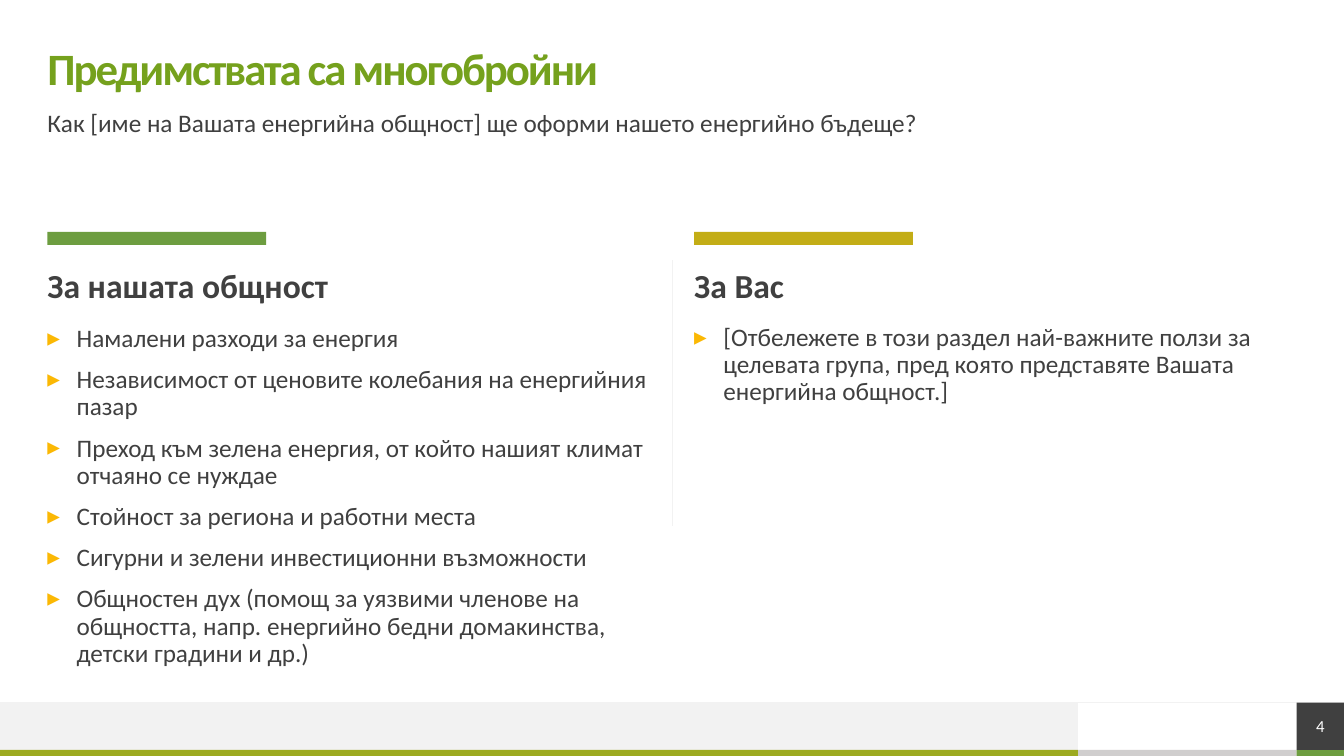
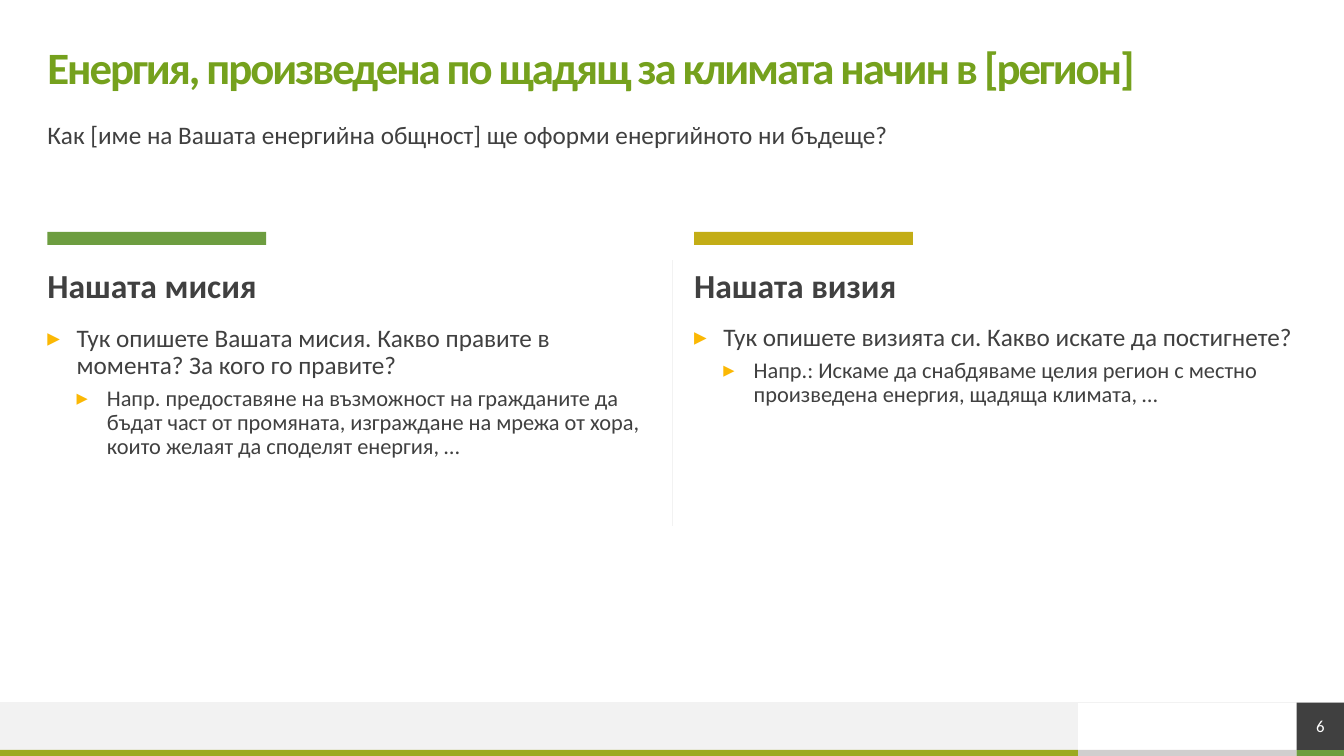
from lxml import etree
from pptx import Presentation
from pptx import util as u
from pptx.dml.color import RGBColor
from pptx.enum import shapes, text
from pptx.oxml import ns

SLIDES = [
    dict(number="4", title="Предимствата са многобройни", title_box=(0.47, 0.47),
         subtitle="Как [име на Вашата енергийна общност] ще оформи нашето енергийно бъдеще?",
         subtitle_top=1.1,
         columns=[
             ("За нашата общност", 3.49, [
                 (0, "Намалени разходи за енергия"),
                 (0, "Независимост от ценовите колебания на енергийния пазар"),
                 (0, "Преход към зелена енергия, от който нашият климат отчаяно се нуждае"),
                 (0, "Стойност за региона и работни места"),
                 (0, "Сигурни и зелени инвестиционни възможности"),
                 (0, "Общностен дух (помощ за уязвими членове на общността, напр. "
                     "енергийно бедни домакинства, детски градини и др.)")]),
             ("За Вас", 2.4, [
                 (0, "[Отбележете в този раздел най-важните ползи за целевата група, "
                     "пред която представяте Вашата енергийна общност.]")])]),
    dict(number="6", title="Енергия, произведена по щадящ за климата начин в [регион]",
         title_box=(0.25, 0.89),
         subtitle="Как [име на Вашата енергийна общност] ще оформи енергийното ни бъдеще?",
         subtitle_top=1.22,
         columns=[
             ("Нашата мисия", 2.4, [
                 (0, "Тук опишете Вашата мисия. Какво правите в момента? За кого го правите?"),
                 (1, "Напр. предоставяне на възможност на гражданите да бъдат част от промяната, "
                     "изграждане на мрежа от хора, които желаят да споделят енергия, …")]),
             ("Нашата визия", 2.4, [
                 (0, "Тук опишете визията си. Какво искате да постигнете?"),
                 (1, "Напр.: Искаме да снабдяваме целия регион с местно "
                     "произведена енергия, щадяща климата, …")])]),
]

FONT = "Calibri"
TITLE, DARK, PALE, GREY, WHITE = "75A11D", "404040", "F2F2F2", "D0CECE", "FFFFFF"
OLIVE, GREEN, GOLD, BULLET = "9CAA20", "6D9D40", "C3AD16", "FBB804"
LEVELS = [dict(size=18, before=10, indent=0.29, hang=0.29),
          dict(size=16, before=5, indent=0.59, hang=0.3)]

W, H = 13.33, 7.5
MARGIN, GUTTER, TAB, STRIP = 0.47, 0.44, 2.17, 0.06
COLUMN = W / 2 - MARGIN - GUTTER / 2
STRIP_TOP = H - STRIP
BAND_TOP = STRIP_TOP - MARGIN
NUMBER_LEFT = W - MARGIN
BAND_WIDTH = NUMBER_LEFT - TAB


def color(value):
    return RGBColor.from_string(value)


def add_rect(s, left, top, width, height, fill):
    sp = s.shapes.add_shape(shapes.MSO_SHAPE.RECTANGLE, *map(u.Inches, (left, top, width, height)))
    sp.shadow.inherit = False
    sp.fill.solid()
    sp.fill.fore_color.rgb = color(fill)
    sp.line.fill.background()
    return sp


def add_line(s, x1, y1, x2, y2):
    line = s.shapes.add_connector(shapes.MSO_CONNECTOR.STRAIGHT, *map(u.Inches, (x1, y1, x2, y2)))
    line.line.color.rgb = color(PALE)
    line.line.width = u.Pt(0.5)
    etree.SubElement(line._element.spPr, ns.qn("a:effectLst"))


def frame(sp, anchor):
    tf = sp.text_frame
    tf.word_wrap = True
    tf.margin_left = tf.margin_top = tf.margin_right = tf.margin_bottom = 0
    tf.vertical_anchor = anchor
    return tf


def style(p, size, fill=DARK, bold=False):
    for r in p.runs:
        r.font.name, r.font.size, r.font.bold = FONT, u.Pt(size), bold
        r.font.color.rgb = color(fill)


def add_text(s, left, top, width, height, content, size, fill=DARK, bold=False,
             anchor=text.MSO_ANCHOR.TOP):
    tf = frame(s.shapes.add_textbox(*map(u.Inches, (left, top, width, height))), anchor)
    tf.text = content
    p = tf.paragraphs[0]
    p.line_spacing = 0.9
    style(p, size, fill, bold)
    return p


def add_bullet(p, level):
    pPr = p._p.get_or_add_pPr()
    pPr.set("marL", str(u.Inches(level["indent"])))
    pPr.set("indent", str(-u.Inches(level["hang"])))
    clr = etree.SubElement(pPr, ns.qn("a:buClr"))
    etree.SubElement(clr, ns.qn("a:srgbClr"), val=BULLET)
    etree.SubElement(pPr, ns.qn("a:buFont"), typeface=FONT)
    etree.SubElement(pPr, ns.qn("a:buChar"), char="▸")


def add_list(s, left, top, width, height, items):
    tf = frame(s.shapes.add_textbox(*map(u.Inches, (left, top, width, height))), text.MSO_ANCHOR.TOP)
    tf.text = "\n".join(item for _, item in items)
    for i, (p, (depth, _)) in enumerate(zip(tf.paragraphs, items)):
        level = LEVELS[depth]
        p.level = depth
        add_bullet(p, level)
        p.line_spacing = 0.9
        if i:
            p.space_before = u.Pt(level["before"])
        style(p, level["size"])


def add_footer(s, number):
    add_rect(s, BAND_WIDTH, STRIP_TOP, TAB, STRIP, GREY)
    add_rect(s, 0, BAND_TOP, BAND_WIDTH, MARGIN, PALE)
    add_rect(s, 0, STRIP_TOP, BAND_WIDTH, STRIP, OLIVE)
    add_rect(s, NUMBER_LEFT, STRIP_TOP, MARGIN, STRIP, GREEN)
    add_line(s, 0, BAND_TOP, W, BAND_TOP)
    tf = frame(add_rect(s, NUMBER_LEFT, BAND_TOP, MARGIN, MARGIN, DARK), text.MSO_ANCHOR.MIDDLE)
    tf.text = number
    tf.paragraphs[0].alignment = text.PP_ALIGN.CENTER
    style(tf.paragraphs[0], 12, WHITE)


def add_slide(prs, data):
    s = prs.slides.add_slide(prs.slide_layouts[6])
    add_footer(s, data["number"])
    top, height = data["title_box"]
    width = W - 2 * MARGIN
    p = add_text(s, MARGIN, top, width, height, data["title"], 32, TITLE, True, text.MSO_ANCHOR.MIDDLE)
    p.runs[0]._r.get_or_add_rPr().set("spc", "-150")
    add_text(s, MARGIN, data["subtitle_top"], width, 0.39, data["subtitle"], 18)
    add_line(s, W / 2, 2.58, W / 2, 5.22)
    for i, ((heading, list_height, items), fill) in enumerate(zip(data["columns"], (GREEN, GOLD))):
        left = MARGIN + i * (COLUMN + GUTTER)
        add_rect(s, left, 2.3, TAB, 0.13, fill)
        add_text(s, left, 2.67, COLUMN, 0.39, heading, 24, bold=True)
        add_list(s, left, 3.23 - i * 0.01, COLUMN, list_height, items)


def main():
    prs = Presentation()
    prs.slide_width, prs.slide_height = u.Inches(W), u.Inches(H)
    for data in SLIDES:
        add_slide(prs, data)
    prs.save("out.pptx")


if __name__ == "__main__":
    main()
